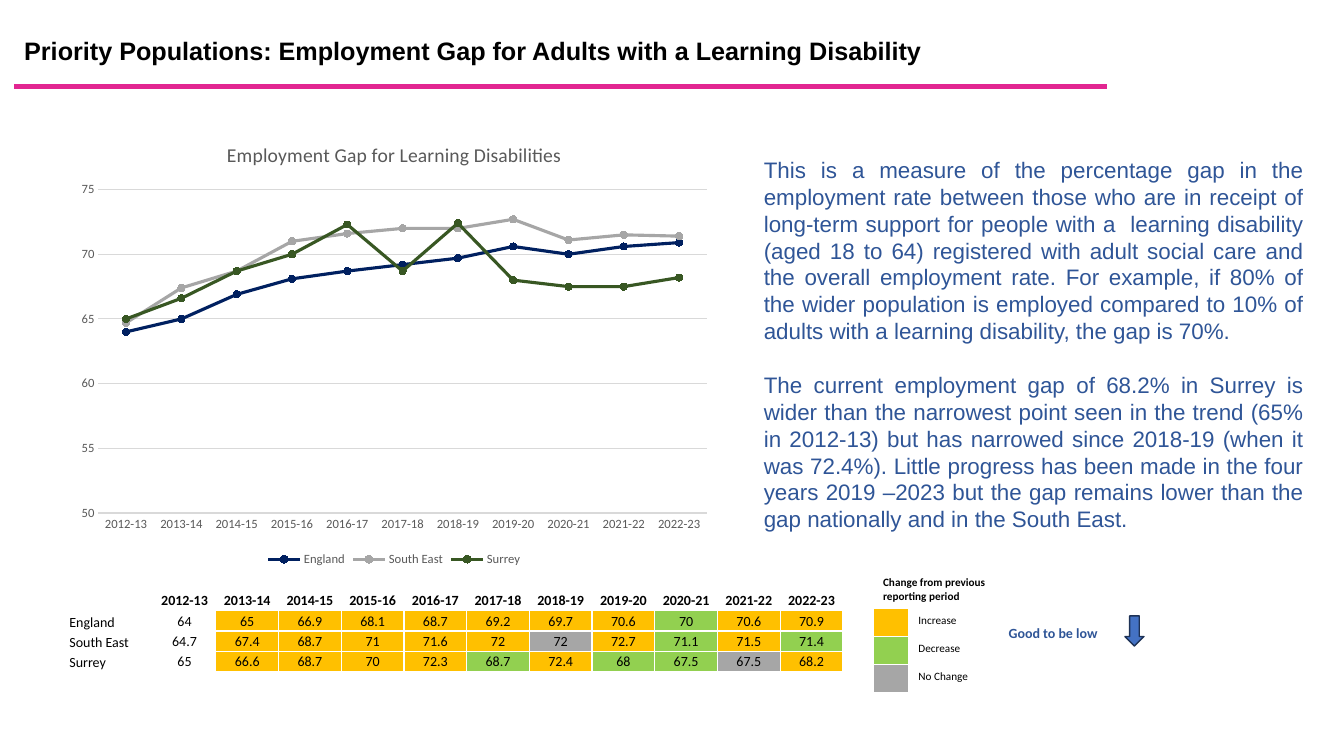
from lxml import etree
from pptx import Presentation
from pptx.chart.data import CategoryChartData
from pptx.dml.color import RGBColor
from pptx.enum.chart import XL_CHART_TYPE, XL_LEGEND_POSITION, XL_MARKER_STYLE, XL_TICK_MARK
from pptx.enum.shapes import MSO_CONNECTOR, MSO_SHAPE
from pptx.enum.text import MSO_ANCHOR, PP_ALIGN
from pptx.oxml.ns import qn
from pptx.util import Cm, Pt

LINE_MARKERS = XL_CHART_TYPE.LINE_MARKERS
BOTTOM_LEGEND = XL_LEGEND_POSITION.BOTTOM
CIRCLE, NO_TICK = XL_MARKER_STYLE.CIRCLE, XL_TICK_MARK.NONE
STRAIGHT, DOWN_ARROW = MSO_CONNECTOR.STRAIGHT, MSO_SHAPE.DOWN_ARROW
TOP, MIDDLE, LOW = MSO_ANCHOR.TOP, MSO_ANCHOR.MIDDLE, MSO_ANCHOR.BOTTOM
LEFT, CENTER, JUSTIFY = PP_ALIGN.LEFT, PP_ALIGN.CENTER, PP_ALIGN.JUSTIFY

COLORS = {
    "black": "000000", "white": "FFFFFF", "grey": "595959", "grid": "D9D9D9",
    "pink": "E22691", "blue": "2F5597", "arrow": "4472C4", "arrow_edge": "1E3256",
    "England": "002060", "South East": "A6A6A6", "Surrey": "385723",
    "Increase": "FFC000", "Decrease": "92D050", "No Change": "A6A6A6",
}
YEARS = [f"{y}-{y % 100 + 1}" for y in range(2012, 2023)]
GAPS = {
    "England": [64, 65, 66.9, 68.1, 68.7, 69.2, 69.7, 70.6, 70, 70.6, 70.9],
    "South East": [64.7, 67.4, 68.7, 71, 71.6, 72, 72, 72.7, 71.1, 71.5, 71.4],
    "Surrey": [65, 66.6, 68.7, 70, 72.3, 68.7, 72.4, 68, 67.5, 67.5, 68.2],
}
NARRATIVE = [
    "This is a measure of the percentage gap in the employment rate between those who are "
    "in receipt of long-term support for people with a  learning disability (aged 18 to 64) "
    "registered with adult social care and the overall employment rate. For example, if 80% "
    "of the wider population is employed compared to 10% of adults with a learning "
    "disability, the gap is 70%.",
    "The current employment gap of 68.2% in Surrey is wider than the narrowest point seen in "
    "the trend (65% in 2012-13) but has narrowed since 2018-19 (when it was 72.4%). Little "
    "progress has been made in the four years 2019 –2023 but the gap remains lower than the "
    "gap nationally and in the South East.",
]


def rgb(name):
    return RGBColor.from_string(COLORS[name])


def set_font(font, size, color, name="Calibri", bold=False):
    for key, value in {"size": Pt(size), "name": name, "bold": bold}.items():
        setattr(font, key, value)
    font.color.rgb = rgb(color)


def set_line(line, color, width):
    line.color.rgb = rgb(color)
    line.width = Pt(width)


def add_text(slide, box, paragraphs, font, anchor=TOP, **fmt):
    tf = slide.shapes.add_textbox(*map(Cm, box)).text_frame
    tf.word_wrap, tf.vertical_anchor = True, anchor
    for i, text in enumerate(paragraphs):
        p = tf.add_paragraph() if i else tf.paragraphs[0]
        for key, value in fmt.items():
            setattr(p, key, value)
        if i:
            p.space_before = Pt(19.2)
        r = p.add_run()
        r.text = text
        set_font(r.font, **font)


def add_grid(slide, left, top, cols, rows):
    frame = slide.shapes.add_table(len(rows), len(cols), Cm(left), Cm(top),
                                   Cm(sum(cols)), Cm(sum(rows)))
    table = frame.table
    table.first_row = table.horz_banding = False
    for col, width in zip(table.columns, cols):
        col.width = Cm(width)
    for row, height in zip(table.rows, rows):
        row.height = Cm(height)
    return table


def fill_cell(cell, text, size, fill=None, bold=False, align=LEFT, anchor=TOP, tight=False):
    tc_pr = cell._tc.get_or_add_tcPr()
    for side in ("lnL", "lnR", "lnT", "lnB"):
        ln = etree.SubElement(tc_pr, qn("a:" + side), w=str(Pt(1)))
        solid = etree.SubElement(ln, qn("a:solidFill"))
        etree.SubElement(solid, qn("a:srgbClr"), val=COLORS["white"])
    if fill:
        cell.fill.solid()
        cell.fill.fore_color.rgb = rgb(fill)
    else:
        cell.fill.background()
    cell.vertical_anchor = anchor
    if tight:
        cell.margin_left = cell.margin_right = cell.margin_top = Cm(0.02)
        cell.margin_bottom = 0
    p = cell.text_frame.paragraphs[0]
    p.alignment = align
    if text:
        r = p.add_run()
        r.text = text
        set_font(r.font, size, "black", bold=bold)
    else:
        etree.SubElement(p._p, qn("a:endParaRPr"), sz=str(size * 100))


def change(before, now):
    if now == before:
        return "No Change"
    return "Increase" if now > before else "Decrease"


def add_header(slide, left, top, width, height):
    add_text(slide, (left, top, width, height),
             ["Priority Populations: Employment Gap for Adults with a Learning Disability"],
             {"size": 18, "color": "black", "name": "Arial", "bold": True},
             MIDDLE, line_spacing=0.9)
    y = Cm(top + 1.95)
    rule = slide.shapes.add_connector(STRAIGHT, Cm(left), y, Cm(left + 27.53), y)
    set_line(rule.line, "pink", 3)
    etree.SubElement(rule._element.spPr, qn("a:effectLst"))


def add_gap_chart(slide, left, top, width, height):
    data = CategoryChartData()
    data.categories = YEARS
    for area, values in GAPS.items():
        data.add_series(area, values)
    chart = slide.shapes.add_chart(LINE_MARKERS, Cm(left), Cm(top), Cm(width), Cm(height),
                                   data).chart
    set_font(chart.font, 10, "black")
    chart.has_title = True
    p = chart.chart_title.text_frame.paragraphs[0]
    r = p.add_run()
    r.text = "Employment Gap for Learning Disabilities"
    set_font(r.font, 14, "grey")
    chart.has_legend = True
    chart.legend.position = BOTTOM_LEGEND
    chart.legend.include_in_layout = False
    set_font(chart.legend.font, 9, "grey")

    # Axes
    years, percent = chart.category_axis, chart.value_axis
    for axis in (years, percent):
        axis.major_tick_mark = axis.minor_tick_mark = NO_TICK
        set_font(axis.tick_labels.font, 9, "grey")
    set_line(years.format.line, "grid", 0.75)
    percent.format.line.fill.background()
    set_line(percent.major_gridlines.format.line, "grid", 0.75)
    for key, value in {"minimum_scale": 50, "maximum_scale": 75, "major_unit": 5}.items():
        setattr(percent, key, value)

    # Series
    chart.plots[0].vary_by_categories = False
    for s in chart.plots[0].series:
        s.smooth = False
        set_line(s.format.line, s.name, 2.25)
        s.marker.style, s.marker.size = CIRCLE, 5
        s.marker.format.fill.solid()
        s.marker.format.fill.fore_color.rgb = rgb(s.name)
        set_line(s.marker.format.line, s.name, 0.75)


def add_gap_table(slide, left, top):
    table = add_grid(slide, left, top, [2.13] + [1.58] * len(YEARS), [0.51] * 4)
    centred = {"size": 10, "align": CENTER, "anchor": MIDDLE, "tight": True}
    for c, text in enumerate([""] + YEARS):
        fill_cell(table.cell(0, c), text, bold=True, **centred)
    for row, (area, values) in enumerate(GAPS.items(), 1):
        fill_cell(table.cell(row, 0), area, 10, anchor=LOW, tight=True)
        for c, value in enumerate(values, 1):
            fill = change(values[c - 2], value) if c > 1 else None
            fill_cell(table.cell(row, c), str(value), fill=fill, **centred)


def add_change_key(slide, left, top):
    table = add_grid(slide, left, top, [0.89, 3.15], [0.86] + [0.71] * 3)
    table.cell(0, 0).merge(table.cell(0, 1))
    fill_cell(table.cell(0, 0), "Change from previous reporting period", 8, bold=True)
    for row, label in enumerate(("Increase", "Decrease", "No Change"), 1):
        fill_cell(table.cell(row, 0), "", 8, fill=label)
        fill_cell(table.cell(row, 1), label, 8)


def add_direction(slide, left, top):
    add_text(slide, (left, top, 3.1, 0.69), ["Good to be low"],
             {"size": 10, "color": "blue", "bold": True})
    sp = slide.shapes.add_shape(DOWN_ARROW, Cm(left + 3.18), Cm(top - 0.08), Cm(0.48), Cm(0.76))
    sp.shadow.inherit = False
    sp.fill.solid()
    sp.fill.fore_color.rgb = rgb("arrow")
    set_line(sp.line, "arrow_edge", 1)


def main():
    prs = Presentation()
    prs.slide_width, prs.slide_height = Cm(33.87), Cm(19.05)
    slide = prs.slides.add_slide(prs.slide_layouts[6])
    add_change_key(slide, 22, 14.38)
    add_text(slide, (19, 3.81, 14.1, 9.83), NARRATIVE,
             {"size": 16, "color": "blue", "name": "Arial"}, alignment=JUSTIFY)
    add_header(slide, 0.36, 0.23, 33.86, 2.18)
    add_direction(slide, 25.17, 15.6)
    add_gap_table(slide, 1.73, 14.88)
    add_gap_chart(slide, 1.73, 3.1, 16.41, 11.28)
    prs.save("out.pptx")


if __name__ == "__main__":
    main()
